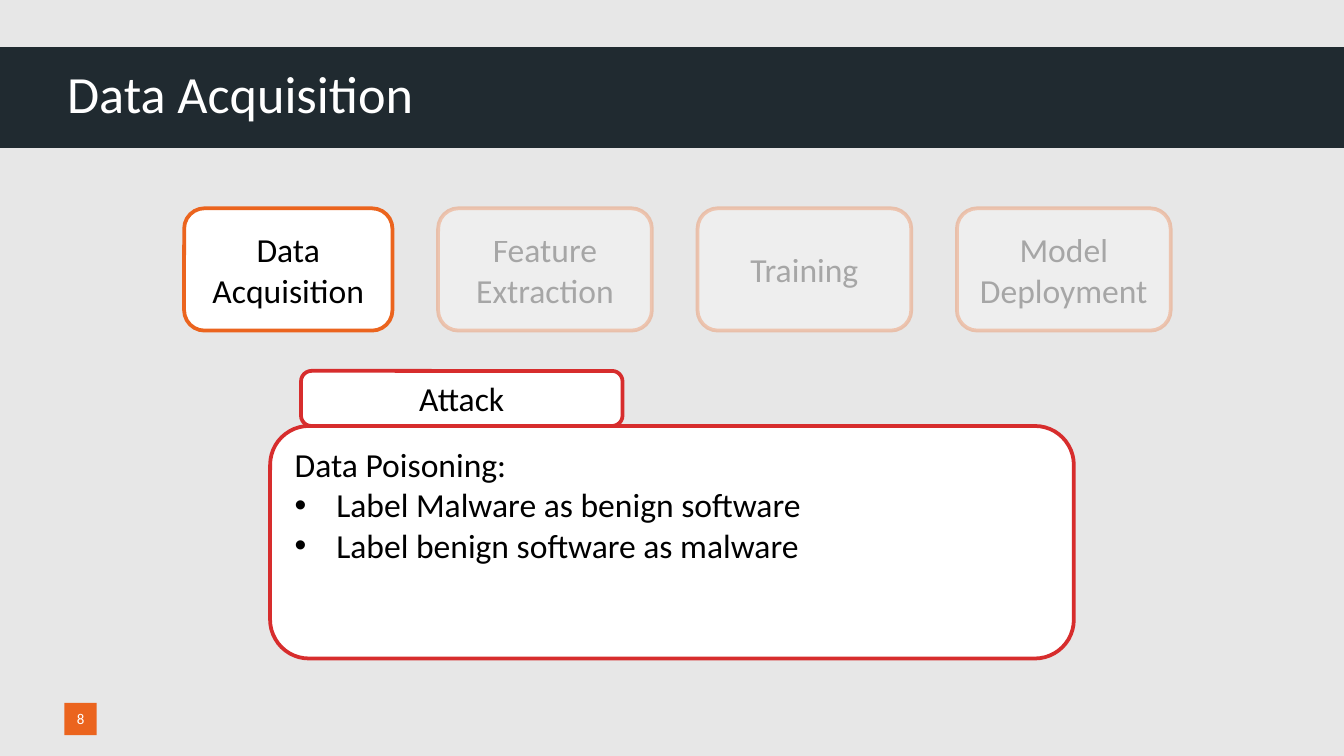
from lxml import etree
from pptx import Presentation
from pptx import util as u
from pptx.dml.color import RGBColor
from pptx.enum import shapes, text
from pptx.oxml.ns import qn

WIDTH = 10
HEIGHT = WIDTH * 9 / 16
FONT = "Calibri"
BACKDROP = RGBColor(0xE7, 0xE7, 0xE7)
NAVY = RGBColor(0x20, 0x2A, 0x30)
ORANGE = RGBColor(0xEB, 0x64, 0x1E)
RED = RGBColor(0xD7, 0x2D, 0x2D)
WHITE = RGBColor(0xFF, 0xFF, 0xFF)
BLACK = RGBColor(0, 0, 0)
FADED = 30  # percent opacity of the steps not under discussion


def add_panel(page, box, fill, line=None, rounding=None):
    """Add a filled rectangle, rounded when a rounding share is given."""
    kind = shapes.MSO_SHAPE.ROUNDED_RECTANGLE if rounding else shapes.MSO_SHAPE.RECTANGLE
    panel = page.shapes.add_shape(kind, *map(u.Inches, box))
    panel.shadow.inherit = False
    if rounding:
        panel.adjustments[0] = rounding
    panel.fill.solid()
    panel.fill.fore_color.rgb = fill
    if line is None:
        panel.line.fill.background()
    else:
        panel.line.color.rgb = line
        panel.line.width = u.Pt(2)
    return panel


def write(shape, lines, size, color, align=text.PP_ALIGN.CENTER,
          anchor=text.MSO_ANCHOR.MIDDLE, margins=True):
    frame = shape.text_frame
    frame.word_wrap = True
    frame.vertical_anchor = anchor
    if not margins:
        frame.margin_left = frame.margin_right = 0
        frame.margin_top = frame.margin_bottom = 0
    frame.text = "\n".join(lines)
    for para in frame.paragraphs:
        para.alignment = align
        for span in para.runs:
            span.font.name = FONT
            span.font.size = u.Pt(size)
            span.font.color.rgb = color


def add_bullet(para, indent):
    props = para._p.get_or_add_pPr()
    props.set("marL", str(u.Inches(indent)))
    props.set("indent", str(u.Inches(-indent)))
    etree.SubElement(props, qn("a:buFont")).set("typeface", "Arial")
    etree.SubElement(props, qn("a:buChar")).set("char", "•")


def fade(shape, opacity):
    """Make fill, line and text of a shape see-through."""
    for color in shape._element.iter(qn("a:srgbClr")):
        etree.SubElement(color, qn("a:alpha")).set("val", str(opacity * 1000))


def add_header(page, box, title):
    left, top, width, height = box
    add_panel(page, box, NAVY)
    title_box = page.shapes.add_textbox(
        *map(u.Inches, (left + 0.5, top - 0.04, width * 0.76, height + 0.01)))
    write(title_box, [title], 28, WHITE, align=text.PP_ALIGN.LEFT, margins=False)


def add_steps(page, box, steps, current):
    left, top, width, height = box
    gap = 0.34
    step_width = (width - gap * (len(steps) - 1)) / len(steps)
    for column, lines in enumerate(steps):
        active = column == current
        inset = 0.04 if active else 0
        step_left = left + column * (step_width + gap) + inset
        step = add_panel(page, (step_left, top, step_width - inset, height),
                         WHITE, ORANGE, 0.167)
        write(step, lines, 18, BLACK)
        if not active:
            fade(step, FADED)


def add_attack(page, box, label, heading, points):
    """Add a labelled tab standing on a panel with a heading and bullets."""
    left, top, width, height = box
    tab_height = 0.41
    tab = add_panel(page, (left + 0.23, top, width * 0.4, tab_height), WHITE, RED, 0.19)
    write(tab, [label], 18, BLACK)
    body = add_panel(page, (left, top + tab_height, width, height - tab_height),
                     WHITE, RED, 0.167)
    write(body, [heading, *points], 18, BLACK,
          align=text.PP_ALIGN.LEFT, anchor=text.MSO_ANCHOR.TOP)
    for para in body.text_frame.paragraphs[1:]:
        add_bullet(para, 0.31)


def add_page_number(page, box, number):
    badge = add_panel(page, box, ORANGE)
    write(badge, [str(number)], 8, WHITE, margins=False)


def main():
    deck = Presentation()
    deck.slide_width, deck.slide_height = u.Inches(WIDTH), u.Inches(HEIGHT)
    page = deck.slides.add_slide(deck.slide_layouts[6])
    page.background.fill.solid()
    page.background.fill.fore_color.rgb = BACKDROP

    add_header(page, (0, 0.35, WIDTH, 0.75), "Data Acquisition")
    add_page_number(page, (0.48, 5.23, 0.24, 0.24), 8)
    add_attack(page, (2.01, 2.76, 5.98, 2.14), "Attack", "Data Poisoning:",
               ["Label Malware as benign software", "Label benign software as malware"])
    add_steps(page, (1.33, 1.55, 7.38, 0.91),
              [["Data Acquisition"], ["Feature", "Extraction"],
               ["Training"], ["Model Deployment"]], current=0)
    deck.save("out.pptx")


if __name__ == "__main__":
    main()
